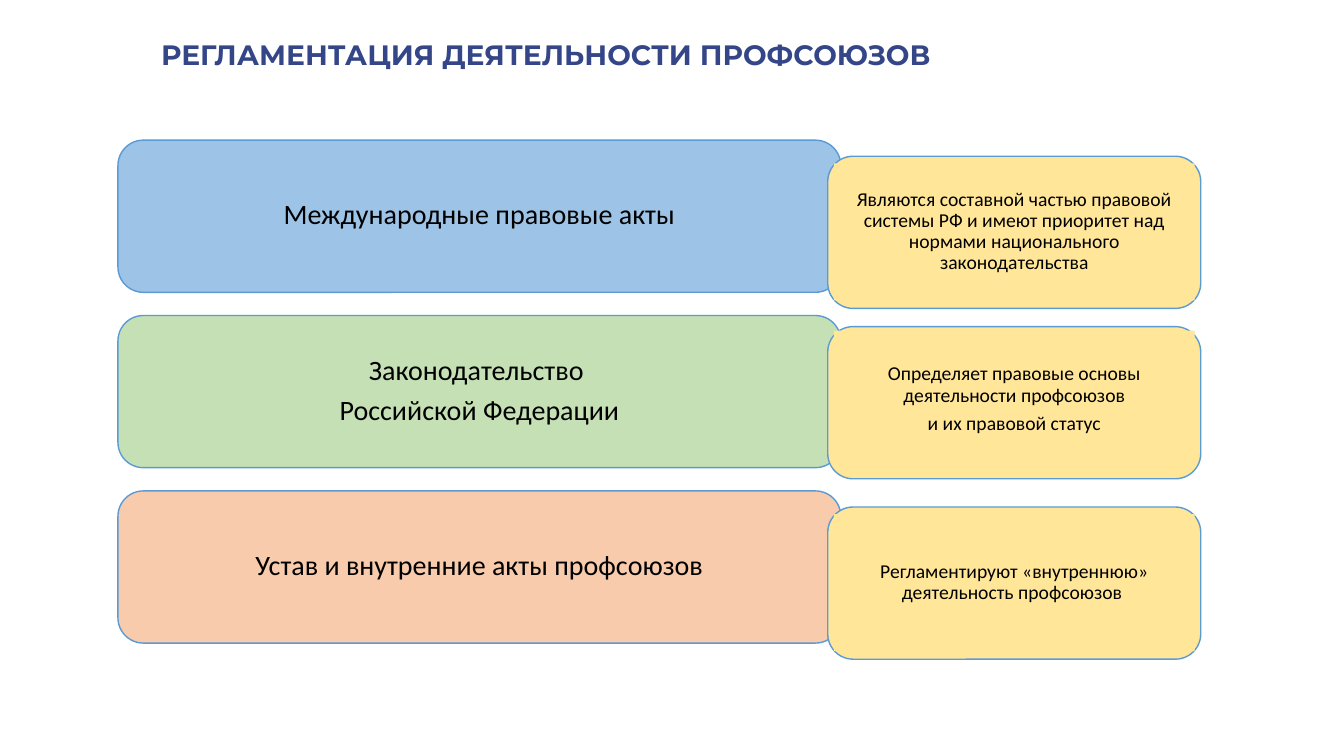
from dataclasses import dataclass

from pptx import Presentation
from pptx.dml.color import RGBColor as Rgb
from pptx.enum.shapes import MSO_SHAPE as Kind
from pptx.enum.text import MSO_ANCHOR as Anchor, PP_ALIGN as Align
from pptx.util import Inches, Pt


@dataclass(frozen=True)
class Theme:
    title: str = "344688"
    text: str = "000000"
    edge: str = "5B9BD5"
    blue: str = "9DC3E6"
    green: str = "C5E0B4"
    peach: str = "F8CBAD"
    note: str = "FFE699"
    head: str = "Montserrat"
    body: str = "Calibri"
    large: int = 20
    small: int = 14


def write(frame, lines, *, font, size, color, bold=False, after=0.0,
          anchor=Anchor.MIDDLE, pad=None):
    """Fill a frame with centred lines; after is a share of the type size."""
    frame.word_wrap = True
    frame.vertical_anchor = anchor
    if pad is not None:
        frame.margin_left = frame.margin_right = Inches(pad)
        frame.margin_top = frame.margin_bottom = Inches(pad)
    for i, line in enumerate(lines):
        para = frame.paragraphs[0] if i == 0 else frame.add_paragraph()
        para.alignment = Align.CENTER
        para.line_spacing = 0.9
        para.space_after = Pt(size * after)
        run = para.add_run()
        run.text = line
        run.font.name = font
        run.font.size = Pt(size)
        run.font.bold = bold
        run.font.color.rgb = Rgb.from_string(color)


class Deck:
    def __init__(self, theme):
        self.theme = theme
        self.file = Presentation()
        self.file.slide_width = Inches(13.33)
        self.file.slide_height = Inches(7.5)
        self.slide = self.file.slides.add_slide(self.file.slide_layouts[6])

    def title(self, text, *box):
        area = self.slide.shapes.add_textbox(*map(Inches, box))
        write(area.text_frame, [text], font=self.theme.head,
              size=self.theme.large, color=self.theme.title, bold=True,
              anchor=Anchor.BOTTOM)

    def shape(self, kind, fill, box, edge=None):
        item = self.slide.shapes.add_shape(kind, *map(Inches, box))
        item.shadow.inherit = False
        item.fill.solid()
        item.fill.fore_color.rgb = Rgb.from_string(fill)
        if edge:
            item.line.color.rgb = Rgb.from_string(edge)
            item.line.width = Pt(1)
        else:
            item.line.fill.background()
        return item

    def card(self, lines, fill, size, box, inset):
        """Draw a rounded card with a flat text panel centred across it."""
        left, top, width, height = box
        across, down = inset
        self.shape(Kind.ROUNDED_RECTANGLE, fill, box, self.theme.edge)
        panel = self.shape(Kind.RECTANGLE, fill, (
            left + across, top + down, width - 2 * across, height - 0.15))
        write(panel.text_frame, lines, font=self.theme.body, size=size,
              color=self.theme.text, after=0.35, pad=0.07)


def main():
    theme = Theme()
    deck = Deck(theme)
    deck.title("РЕГЛАМЕНТАЦИЯ ДЕЯТЕЛЬНОСТИ ПРОФСОЮЗОВ ", 0.25, 0.1, 10.41, 0.66)

    high = 1.51
    acts = [
        (theme.blue, ["Международные правовые акты"]),
        (theme.green, ["Законодательство ", "Российской Федерации"]),
        (theme.peach, ["Устав и внутренние акты профсоюзов"]),
    ]
    for row, (fill, lines) in enumerate(acts):
        deck.card(lines, fill, theme.large,
                  (1.17, 1.39 + 1.74 * row, 7.17, high), (0.13, 0.07))

    notes = [
        (1.55, 0.07, ["Являются составной частью правовой системы РФ и имеют "
                      "приоритет над нормами национального законодательства"]),
        (3.24, 0.04, ["Определяет правовые основы деятельности профсоюзов",
                      "и их правовой статус"]),
        (5.03, 0.07, ["Регламентируют «внутреннюю» деятельность профсоюзов "]),
    ]
    for top, down, lines in notes:
        deck.card(lines, theme.note, theme.small,
                  (8.21, top, 3.7, high), (0.06, down))

    deck.file.save("out.pptx")


if __name__ == "__main__":
    main()
